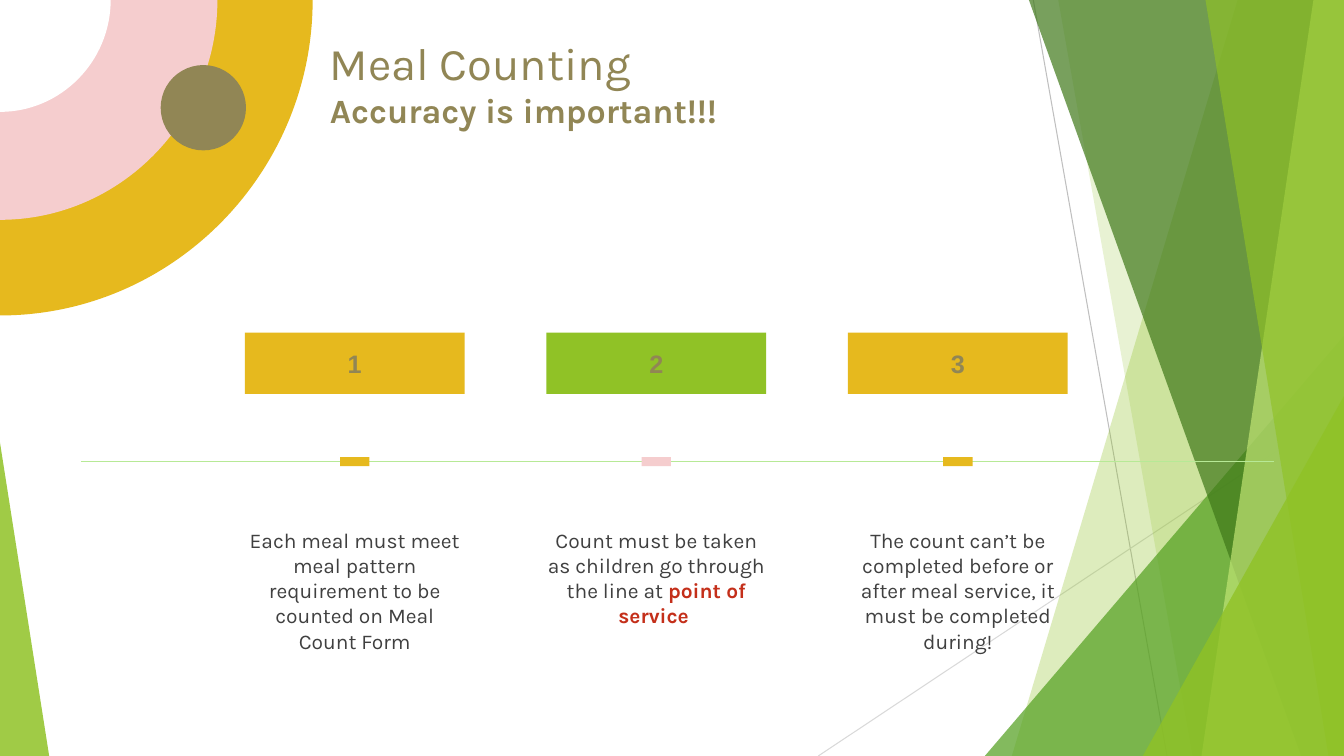
from dataclasses import dataclass
from lxml.etree import SubElement
from pptx import Presentation
from pptx.dml.color import RGBColor
from pptx.enum.shapes import MSO_CONNECTOR, MSO_SHAPE
from pptx.enum.text import MSO_ANCHOR, MSO_AUTO_SIZE, PP_ALIGN
from pptx.oxml.ns import qn
from pptx.util import Cm, Pt


@dataclass(frozen=True)
class Theme:
    lime: str = "90C226"
    green: str = "54A021"
    forest: str = "3F7819"
    pale: str = "C0E474"
    gold: str = "E6B91E"
    pink: str = "F5CDCE"
    white: str = "FFFFFF"
    olive: str = "918655"
    ink: str = "404040"
    red: str = "C42F1A"
    axis: str = "B7E996"
    gray: str = "BFBFBF"
    silver: str = "D9D9D9"
    font: str = "Karla"
    digit: str = "Arial"
    head: float = 32.4
    sub: float = 24.3
    label: float = 18
    body: float = 15


T = Theme()
WIDE, HIGH = 33.87, 19.05

TITLE = ("Meal Counting", "Accuracy is important!!!")
STEPS = [
    ("1", T.gold, T.gold, "Each meal must meet meal pattern requirement to be counted on Meal Count Form", ""),
    ("2", T.lime, T.pink, "Count must be taken as children go through the line at ", "point of service "),
    ("3", T.gold, T.gold, "The count can’t be completed before or after meal service, it must be completed during!", ""),
]
RAYS = [
    ((26.04, 0), (29.41, HIGH), T.gray, 0.75),
    ((WIDE, 10.24), (20.62, HIGH), T.silver, 0.75),
]
AXIS = ((2.04, 11.63), (32.1, 11.63), T.axis, 1)
FACETS = [
    ("panel", 31.19, 25.5, T.lime, 30),
    ("panel", 26.67, 30.05, T.lime, 20),
    ("peak", 8.46, 24.82, T.green, 72),
    ("panel", 25.93, 32.79, T.forest, 70),
    ("panel", 33.1, 30.28, T.pale, 70),
    ("panel", 30.38, 33.48, T.lime, 65),
    ("peak", 9.98, 28.8, T.lime, 80),
]
DISCS = [(7.88, 7.95, T.gold), (5.48, 5.54, T.pink), (2.79, 2.82, T.white)]
FIRST, PITCH, SPAN = 6.17, 7.6, 5.54
BEND = 0.55


def paint(shape, color, alpha=100):
    """Fill a shape without outline or shadow."""
    shape.shadow.inherit = False
    shape.fill.solid()
    shape.fill.fore_color.rgb = RGBColor.from_string(color)
    if alpha < 100:
        tint = shape.element.spPr.find(".//" + qn("a:srgbClr"))
        SubElement(tint, qn("a:alpha")).set("val", str(alpha * 1000))
    shape.line.fill.background()


def block(shapes, kind, box, color, alpha=100):
    """Add a filled preset shape."""
    shape = shapes.add_shape(kind, *map(Cm, box))
    paint(shape, color, alpha)
    return shape


def outline(shapes, points, color, alpha=100):
    """Add a filled polygon."""
    spots = [(Cm(x), Cm(y)) for x, y in points]
    pen = shapes.build_freeform(*spots[0])
    pen.add_line_segments(spots[1:], close=True)
    shape = pen.convert_to_shape()
    paint(shape, color, alpha)
    return shape


def disc(shapes, across, down, color):
    """Add a quarter disc in the top left corner."""
    points = [(0, 0), (across, 0), (across, down * BEND), (across * BEND, down), (0, down)]
    shape = outline(shapes, points, color)
    legs = list(shape.element.iter(qn("a:lnTo")))[1:4]
    trace = legs[0].getparent()
    curve = SubElement(trace, qn("a:cubicBezTo"))
    legs[0].addprevious(curve)
    for leg in legs:
        curve.append(leg[0])
        trace.remove(leg)


def rule(shapes, start, end, color, width):
    """Add a plain straight line."""
    line = shapes.add_connector(MSO_CONNECTOR.STRAIGHT, *map(Cm, start + end))
    line.line.color.rgb = RGBColor.from_string(color)
    line.line.width = Pt(width)
    SubElement(line.element.spPr, qn("a:effectLst"))


def style(run, size, color, bold=False, font=T.font):
    """Format one run."""
    run.font.size, run.font.bold, run.font.name = Pt(size), bold, font
    run.font.color.rgb = RGBColor.from_string(color)


def place(holder, box):
    """Move a placeholder to the front and fix its box."""
    holder.left, holder.top, holder.width, holder.height = map(Cm, box)
    holder.element.getparent().append(holder.element)
    frame = holder.text_frame
    frame.word_wrap = True
    frame.auto_size = MSO_AUTO_SIZE.NONE
    frame.vertical_anchor = MSO_ANCHOR.TOP
    return frame


def scenery(shapes):
    """Draw the facets, discs and lines behind the text."""
    for ray in RAYS:
        rule(shapes, *ray)
    for kind, top, foot, color, alpha in FACETS:
        if kind == "panel":
            corners = [(top, 0), (WIDE, 0), (WIDE, HIGH), (foot, HIGH)]
            outline(shapes, corners, color, alpha)
        else:
            box = (foot, top, WIDE - foot, HIGH - top)
            peak = block(shapes, MSO_SHAPE.ISOSCELES_TRIANGLE, box, color, alpha)
            peak.adjustments[0] = 1
    wedge = block(shapes, MSO_SHAPE.ISOSCELES_TRIANGLE, (0, 11.15, 1.24, 7.9), T.lime, 85)
    wedge.adjustments[0] = 0
    for data in DISCS:
        disc(shapes, *data)
    block(shapes, MSO_SHAPE.OVAL, (4.05, 1.64, 2.15, 2.15), T.olive)
    rule(shapes, *AXIS)


def heading(holder):
    """Write the two-line title."""
    frame = place(holder, (8.06, 0.76, 23.88, 3.66))
    line = frame.paragraphs[0]
    line.text = "\v".join(TITLE)
    line.alignment = PP_ALIGN.LEFT
    style(line.runs[0], T.head, T.olive)
    style(line.runs[1], T.sub, T.olive, True)


def step(shapes, holder, left, label, fill, mark, text, stress):
    """Draw one numbered column."""
    box = block(shapes, MSO_SHAPE.RECTANGLE, (left, 8.38, SPAN, 1.55), fill)
    frame = box.text_frame
    frame.text = label
    frame.vertical_anchor = MSO_ANCHOR.MIDDLE
    frame.margin_left = frame.margin_right = frame.margin_top = frame.margin_bottom = 0
    digit = frame.paragraphs[0]
    digit.alignment = PP_ALIGN.CENTER
    style(digit.runs[0], T.label, T.olive, True, T.digit)

    frame = place(holder, (left, 13.16, SPAN, 3.61))
    frame.margin_left = frame.margin_right = 0
    note = frame.paragraphs[0]
    note.text = text
    note.alignment = PP_ALIGN.CENTER
    note.space_before = Pt(0)
    props = note._p.get_or_add_pPr()
    props.set("marL", "0")
    props.set("indent", "0")
    SubElement(props, qn("a:buNone"))
    style(note.runs[0], T.body, T.ink)
    if stress:
        run = note.add_run()
        run.text = stress
        style(run, T.body, T.red, True)
    tick = (left + SPAN / 2 - 0.37, 11.52, 0.74, 0.23)
    block(shapes, MSO_SHAPE.RECTANGLE, tick, mark)


def main():
    """Build the meal counting slide."""
    deck = Presentation()
    deck.slide_width, deck.slide_height = Cm(WIDE), Cm(HIGH)
    slide = deck.slides.add_slide(deck.slide_layouts[4])
    title, *notes, spare = slide.placeholders
    spare.element.getparent().remove(spare.element)
    scenery(slide.shapes)
    heading(title)
    for i, (note, data) in enumerate(zip(notes, STEPS)):
        step(slide.shapes, note, FIRST + i * PITCH, *data)
    deck.save("out.pptx")


if __name__ == "__main__":
    main()
